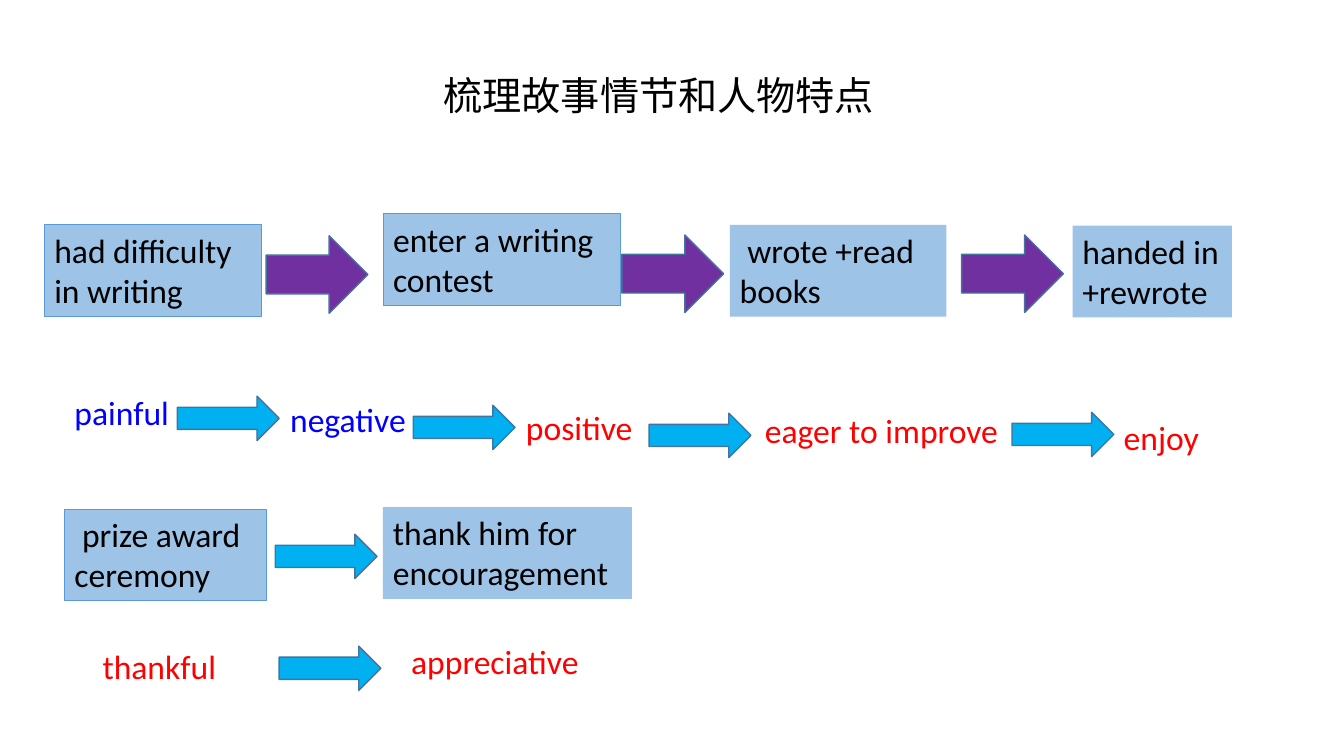
import pptx
import pptx.util
import pptx.dml.color
import pptx.enum.shapes
import pptx.enum.text

Pt = pptx.util.Pt
COLORS = {
    "black": "000000", "blue": "0000FF", "red": "FF0000",
    "box": "9DC3E6", "box_line": "5B9BD5",
    "purple": "7030A0", "sky": "00B0F0", "arrow_line": "43739E",
}
BOX_H, LABEL_H = 65.5, 36
ARROW_W, BIG_ARROW_H, SMALL_ARROW_H = 72.7, 55.4, 31.7


def rgb(name):
    """Return the named colour."""
    return pptx.dml.color.RGBColor.from_string(COLORS[name])


def write(sp, text, color, size=24, font="Calibri"):
    """Put left-aligned, top-anchored text into a shape."""
    tf = sp.text_frame
    tf.word_wrap = True
    tf.auto_size = pptx.enum.text.MSO_AUTO_SIZE.NONE
    tf.vertical_anchor = pptx.enum.text.MSO_ANCHOR.TOP
    p = tf.paragraphs[0]
    p.text = text
    p.alignment = pptx.enum.text.PP_ALIGN.LEFT
    p.line_spacing = 1.0
    p.font.size = Pt(size)
    p.font.name = font
    p.font.color.rgb = rgb(color)


def add_filled(s, kind, x, y, w, h, fill, line, width):
    """Add a filled preset shape, outlined when a line colour is given."""
    sp = s.shapes.add_shape(kind, Pt(x), Pt(y), Pt(w), Pt(h))
    sp.shadow.inherit = False
    sp.fill.solid()
    sp.fill.fore_color.rgb = rgb(fill)
    if line:
        sp.line.color.rgb = rgb(line)
        sp.line.width = Pt(width)
    else:
        sp.line.fill.background()
    return sp


def add_arrows(s, x, y, h, fill, places):
    """Add right arrows at offsets from a corner."""
    kind = pptx.enum.shapes.MSO_SHAPE.RIGHT_ARROW
    for dx, dy in places:
        add_filled(s, kind, x + dx, y + dy, ARROW_W, h, fill, "arrow_line", 1)


def add_events(s, x, y, events):
    """Add story event boxes at offsets from a corner."""
    kind = pptx.enum.shapes.MSO_SHAPE.RECTANGLE
    for text, dx, dy, w, line in events:
        sp = add_filled(s, kind, x + dx, y + dy, w, BOX_H, "box", line, 0.75)
        write(sp, text, "black")


def add_feelings(s, x, y, feelings):
    """Add feeling labels at offsets from a corner."""
    for text, dx, dy, w, color in feelings:
        sp = s.shapes.add_textbox(Pt(x + dx), Pt(y + dy), Pt(w), Pt(LABEL_H))
        write(sp, text, color)


def add_title(s, x, y, w, h):
    """Place the slide title in its box."""
    sp = s.shapes.title
    sp.left, sp.top, sp.width, sp.height = Pt(x), Pt(y), Pt(w), Pt(h)
    write(sp, "梳理故事情节和人物特点", "black", 28, "Times New Roman")


def add_plot(s, x, y):
    """Draw the main plot events."""
    add_events(s, x, y, [
        ("had difficulty in writing", 0, 8, 154.8, "box_line"),
        ("enter a writing contest", 242, 0, 169.2, "box_line"),
        (" wrote +read books", 489.6, 8, 154.8, None),
        ("handed in +rewrote", 734.4, 8.6, 113.8, None),
    ])
    add_arrows(s, x, y, BIG_ARROW_H, "purple",
               [(158.4, 15.8), (412.5, 15.2), (655.2, 15.2)])


def add_plot_feelings(s, x, y):
    """Draw the feelings along the main plot."""
    add_feelings(s, x, y, [
        ("painful", 0, 0, 114.5, "blue"),
        ("negative", 154.1, 5, 122.4, "blue"),
        ("positive", 322.5, 10.8, 106.6, "red"),
        ("eager to improve", 493.2, 13, 192.2, "red"),
        ("enjoy", 749.5, 18, 93.6, "red"),
    ])
    add_arrows(s, x, y, SMALL_ARROW_H, "sky",
               [(80.6, 6.5), (249.1, 13), (417.6, 18.7), (676.8, 18)])


def add_ending(s, x, y):
    """Draw the closing events."""
    add_events(s, x, y, [
        (" prize award ceremony", 0, 1.4, 144, "box_line"),
        ("thank him for encouragement", 227.5, 0, 177.8, None),
    ])
    add_arrows(s, x, y, SMALL_ARROW_H, "sky", [(150.5, 19.4)])


def add_ending_feelings(s, x, y):
    """Draw the feelings along the closing events."""
    add_feelings(s, x, y, [
        ("thankful", 0, 3.6, 120.2, "red"),
        ("appreciative", 220.4, 0, 144.7, "red"),
    ])
    add_arrows(s, x, y, SMALL_ARROW_H, "sky", [(133.2, 7.2)])


def main():
    """Build and save the slide."""
    prs = pptx.Presentation()
    prs.slide_width, prs.slide_height = Pt(960), Pt(540)
    s = prs.slides.add_slide(prs.slide_layouts.get_by_name("Title Only"))
    add_title(s, 309.6, 47.5, 340.6, 41)
    add_plot(s, 31.7, 152.6)
    add_plot_feelings(s, 46.1, 276.5)
    add_ending(s, 46.1, 362.2)
    add_ending_feelings(s, 66.2, 454.3)
    prs.save("out.pptx")


if __name__ == "__main__":
    main()
